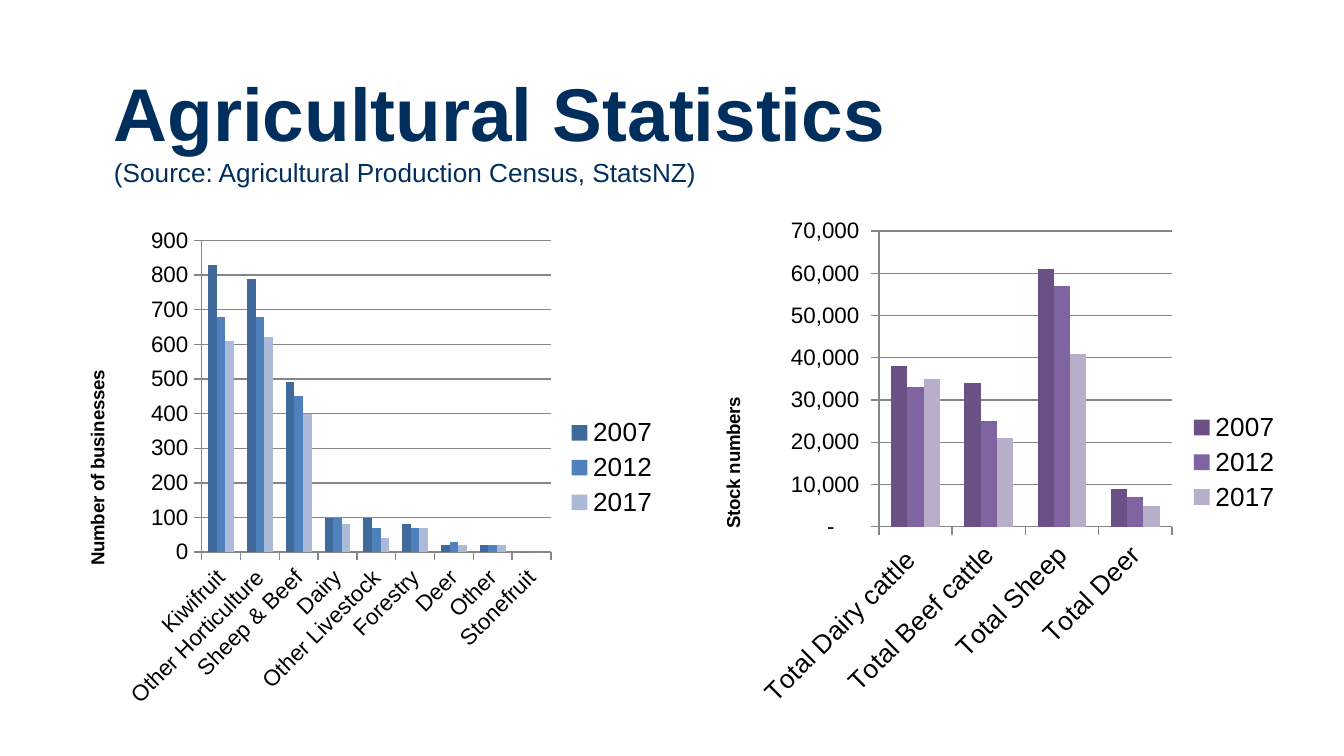
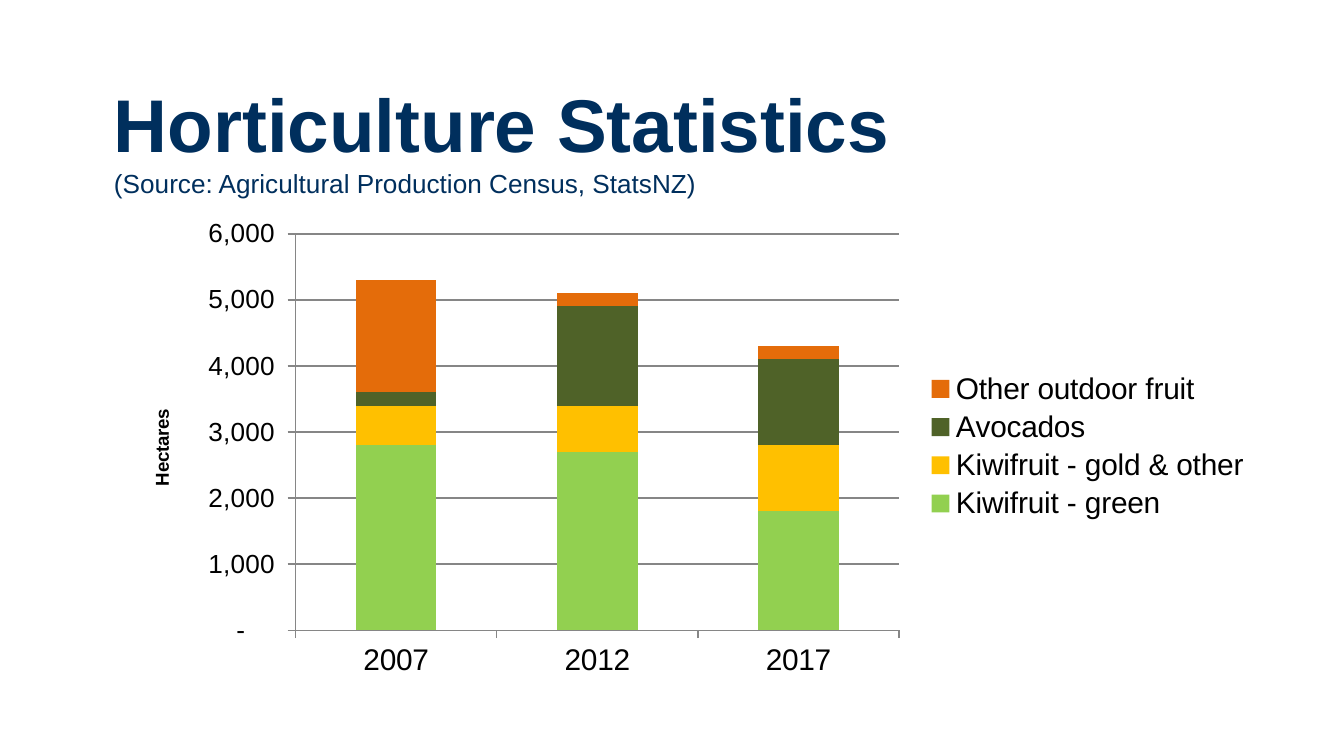
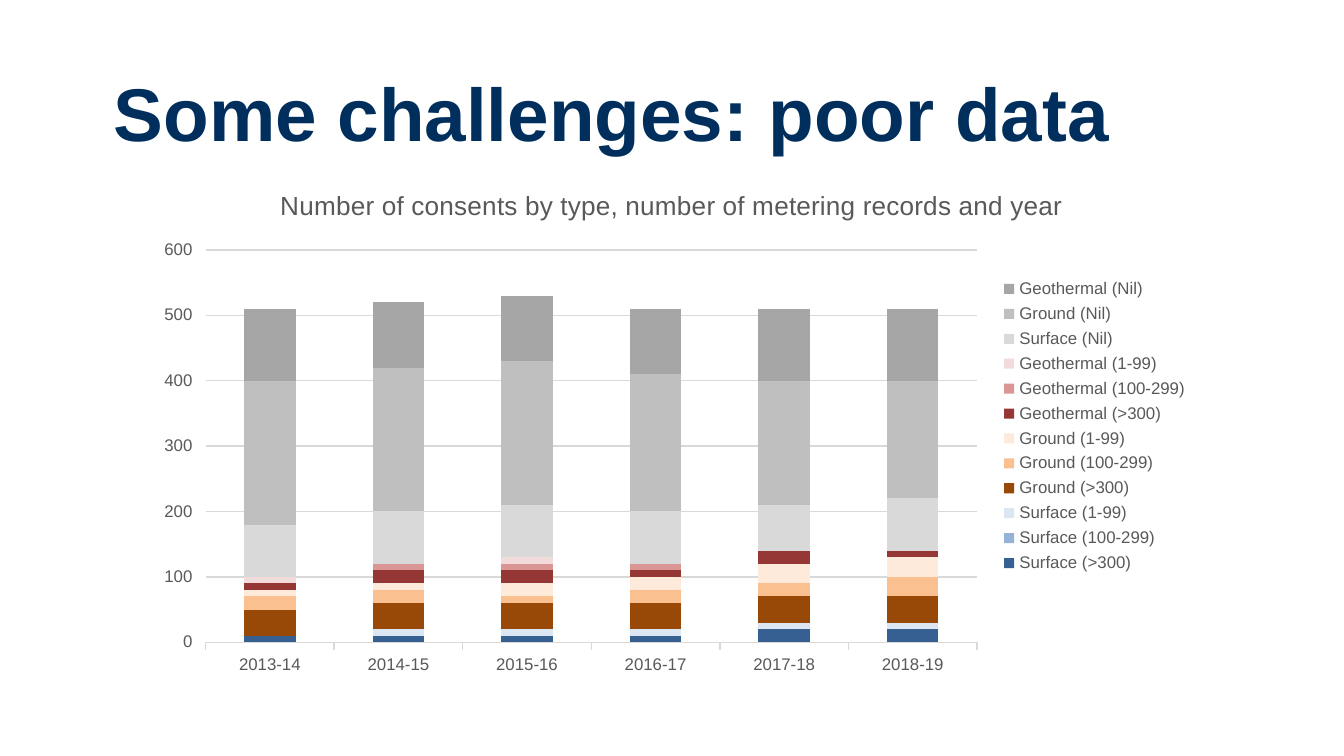
"""Build three slides of agricultural and water-consent statistics."""
from dataclasses import dataclass

from lxml import etree
from pptx import Presentation
from pptx import util as u
from pptx.chart import data as chart_data
from pptx.dml import color
from pptx.enum import chart as kinds
from pptx.oxml import ns


@dataclass(frozen=True)
class Theme:
    font: str = "Arial"
    navy: str = "002F5D"
    black: str = "000000"
    slate: str = "595959"
    rule: str = "868686"
    pale_rule: str = "D9D9D9"
    blues: tuple = ("40699C", "4F81BD", "AABAD7")
    purples: tuple = ("695185", "8064A2", "B9AECA")
    title: int = 40
    heading: int = 14
    axis_title: int = 10
    thousands: str = '_-* #,##0_-;\\-* #,##0_-;_-* "-"??_-;_-@_'


class Deck:
    def __init__(self, theme):
        self.theme = theme
        self.prs = Presentation()
        self.prs.slide_width = u.Inches(10)
        self.prs.slide_height = u.Inches(10) * 9 // 16
        self.slide = None

    def style(self, font, size, ink, bold=False):
        font.name, font.size, font.bold = self.theme.font, u.Pt(size), bold
        font.color.rgb = color.RGBColor.from_string(ink)

    def add_slide(self, title, source=None, top=0.45):
        self.slide = self.prs.slides.add_slide(self.prs.slide_layouts[6])
        box = self.slide.shapes.add_textbox(
            u.Inches(0.75), u.Inches(top), u.Inches(8.5), u.Inches(0.65))
        frame = box.text_frame
        frame.word_wrap = True
        frame.text = f"{title} \v{source}" if source else title
        heading, *sources = frame.paragraphs[0].runs
        self.style(heading.font, self.theme.title, self.theme.navy, True)
        for run in sources:
            self.style(run.font, self.theme.heading, self.theme.navy)

    def place(self, element, frame, area, inner=False):
        for old in element.findall(ns.qn("c:layout")):
            element.remove(old)
        layout = etree.Element(ns.qn("c:layout"))
        manual = etree.SubElement(layout, ns.qn("c:manualLayout"))
        settings = [("layoutTarget", "inner")] if inner else []
        settings += [("xMode", "edge"), ("yMode", "edge")]
        origin, size = frame[:2], frame[2:]
        settings += [(name, (spot - start) / span) for name, spot, start, span
                     in zip("xy", area, origin, size)]
        settings += [(name, part / span) for name, part, span
                     in zip("wh", area[2:], size)]
        for name, value in settings:
            etree.SubElement(manual, ns.qn(f"c:{name}")).set("val", str(value))
        words = element.find(ns.qn("c:tx"))
        if words is None:
            element.insert(0, layout)
        else:
            words.addnext(layout)

    def axis(self, axis, size, ink, rule):
        self.style(axis.tick_labels.font, size, ink)
        axis.major_tick_mark = kinds.XL_TICK_MARK.OUTSIDE
        axis.minor_tick_mark = kinds.XL_TICK_MARK.NONE
        self.line(axis.format.line, rule)

    def line(self, line, rule):
        line.color.rgb = color.RGBColor.from_string(rule)
        line.width = u.Pt(0.75)

    def columns(self, frame, plot_area, categories, series, colours, sizes,
                stacked=False, number_format="General", title=None,
                unit=None, unit_at=None, slanted=False, ink=None, rule=None):
        theme = self.theme
        ink, rule = ink or theme.black, rule or theme.rule
        category_size, value_size, legend_size = sizes
        data = chart_data.CategoryChartData(number_format=number_format)
        data.categories = categories
        for name, values in series.items():
            data.add_series(name, values)
        kind = kinds.XL_CHART_TYPE
        chart = self.slide.shapes.add_chart(
            kind.COLUMN_STACKED if stacked else kind.COLUMN_CLUSTERED,
            *map(u.Inches, frame), data).chart
        self.style(chart.font, theme.axis_title, theme.black)

        plot = chart.plots[0]
        plot.vary_by_categories = False
        plot.gap_width, plot.overlap = 150, 100 if stacked else 0
        for bars, fill in zip(plot.series, colours):
            bars.format.fill.solid()
            bars.format.fill.fore_color.rgb = color.RGBColor.from_string(fill)

        self.axis(chart.category_axis, category_size, ink, rule)
        if slanted:
            labels = chart.category_axis._element.find(ns.qn("c:txPr"))
            labels.find(ns.qn("a:bodyPr")).set("rot", "-2700000")
        values_axis = chart.value_axis
        self.axis(values_axis, value_size, ink, rule)
        values_axis.tick_labels.number_format = number_format
        values_axis.tick_labels.number_format_is_linked = False
        self.line(values_axis.major_gridlines.format.line, rule)

        chart.has_title = bool(title)
        if title:
            self.caption(chart.chart_title, title, theme.heading, ink)
            values_axis.format.line.fill.background()
        if unit:
            unit_title = values_axis.axis_title
            self.caption(unit_title, unit, theme.axis_title, ink, True)
            body = unit_title.text_frame._txBody.find(ns.qn("a:bodyPr"))
            body.set("rot", "-5400000")
            self.place(unit_title._element, frame, unit_at)

        chart.has_legend = True
        chart.legend.position = kinds.XL_LEGEND_POSITION.RIGHT
        chart.legend.include_in_layout = False
        self.style(chart.legend.font, legend_size, ink)
        self.place(chart._chartSpace.chart.plotArea, frame, plot_area, inner=True)

    def caption(self, holder, words, size, ink, bold=False):
        holder.text_frame.text = words
        self.style(holder.text_frame.paragraphs[0].runs[0].font, size, ink, bold)


def main():
    theme = Theme()
    deck = Deck(theme)
    census = "(Source: Agricultural Production Census, StatsNZ)"

    deck.add_slide("Agricultural Statistics", census)
    deck.columns(
        (0.43, 1.63, 4.57, 3.7), (1.5, 1.79, 2.6, 2.32),
        ["Kiwifruit", "Other Horticulture", "Sheep & Beef", "Dairy",
         "Other Livestock", "Forestry", "Deer", "Other", "Stonefruit"],
        {"2007": (830, 790, 490, 100, 100, 80, 20, 20, 0),
         "2012": (680, 680, 450, 100, 70, 70, 30, 20, 0),
         "2017": (610, 620, 400, 80, 40, 70, 20, 20, 0)},
        theme.blues, (12, 12, 14), unit="Number of businesses",
        unit_at=(0.61, 2.73), slanted=True)
    deck.columns(
        (5.16, 1.55, 4.47, 3.78), (6.54, 1.72, 2.18, 2.2),
        ["Total Dairy cattle ", "Total Beef cattle", "Total Sheep", "Total Deer"],
        {"2007": (38000, 34000, 61000, 9000),
         "2012": (33000, 25000, 57000, 7000),
         "2017": (35000, 21000, 41000, 5000)},
        theme.purples, (14, 12, 14), number_format=theme.thousands,
        unit="Stock numbers", unit_at=(5.34, 2.93), slanted=True)

    deck.add_slide("Horticulture Statistics", census, top=0.53)
    deck.columns(
        (0.91, 1.55, 8.5, 3.54), (2.2, 1.74, 4.49, 2.95),
        ["2007", "2012", "2017"],
        {"Kiwifruit - green": (2800, 2700, 1800),
         "Kiwifruit - gold & other": (600, 700, 1000),
         "Avocados": (200, 1500, 1300),
         "Other outdoor fruit": (1700, 200, 200)},
        ("92D050", "FFC000", "4F6228", "E46C0A"), (16, 14, 16), stacked=True,
        number_format=theme.thousands, unit="Hectares", unit_at=(1.09, 3.02))

    deck.add_slide("Some challenges: poor data")
    deck.columns(
        (1.06, 1.24, 7.88, 3.86), (1.53, 1.86, 5.74, 2.92),
        [f"{year}-{year % 100 + 1}" for year in range(2013, 2019)],
        {"Surface (>300)": (10, 10, 10, 10, 20, 20),
         "Surface (100-299)": (0, 0, 0, 0, 0, 0),
         "Surface (1-99)": (0, 10, 10, 10, 10, 10),
         "Ground (>300)": (40, 40, 40, 40, 40, 40),
         "Ground (100-299)": (20, 20, 10, 20, 20, 30),
         "Ground (1-99)": (10, 10, 20, 20, 30, 30),
         "Geothermal (>300)": (10, 20, 20, 10, 20, 10),
         "Geothermal (100-299)": (0, 10, 10, 10, 0, 0),
         "Geothermal (1-99)": (10, 0, 10, 0, 0, 0),
         "Surface (Nil)": (80, 80, 80, 80, 70, 80),
         "Ground (Nil)": (220, 220, 220, 210, 190, 180),
         "Geothermal (Nil)": (110, 100, 100, 100, 110, 110)},
        ("376092", "95B3D7", "DCE6F2", "984807", "FAC090", "FDEADA",
         "953735", "D99694", "F2DCDB", "D9D9D9", "BFBFBF", "A6A6A6"),
        (9, 9, 9), stacked=True, ink=theme.slate, rule=theme.pale_rule,
        title="Number of consents by type, number of metering records and year")

    deck.prs.save("out.pptx")


if __name__ == "__main__":
    main()
